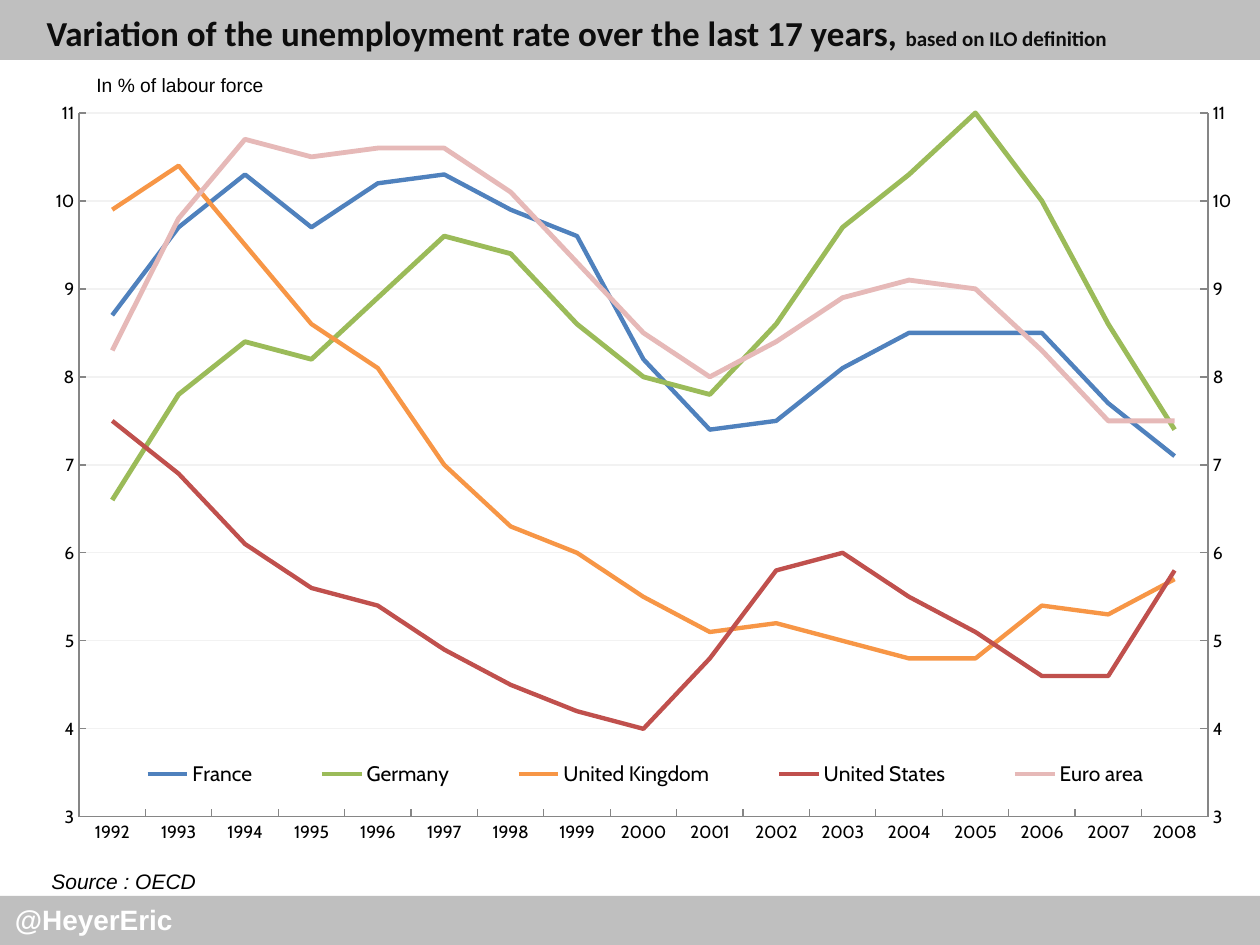
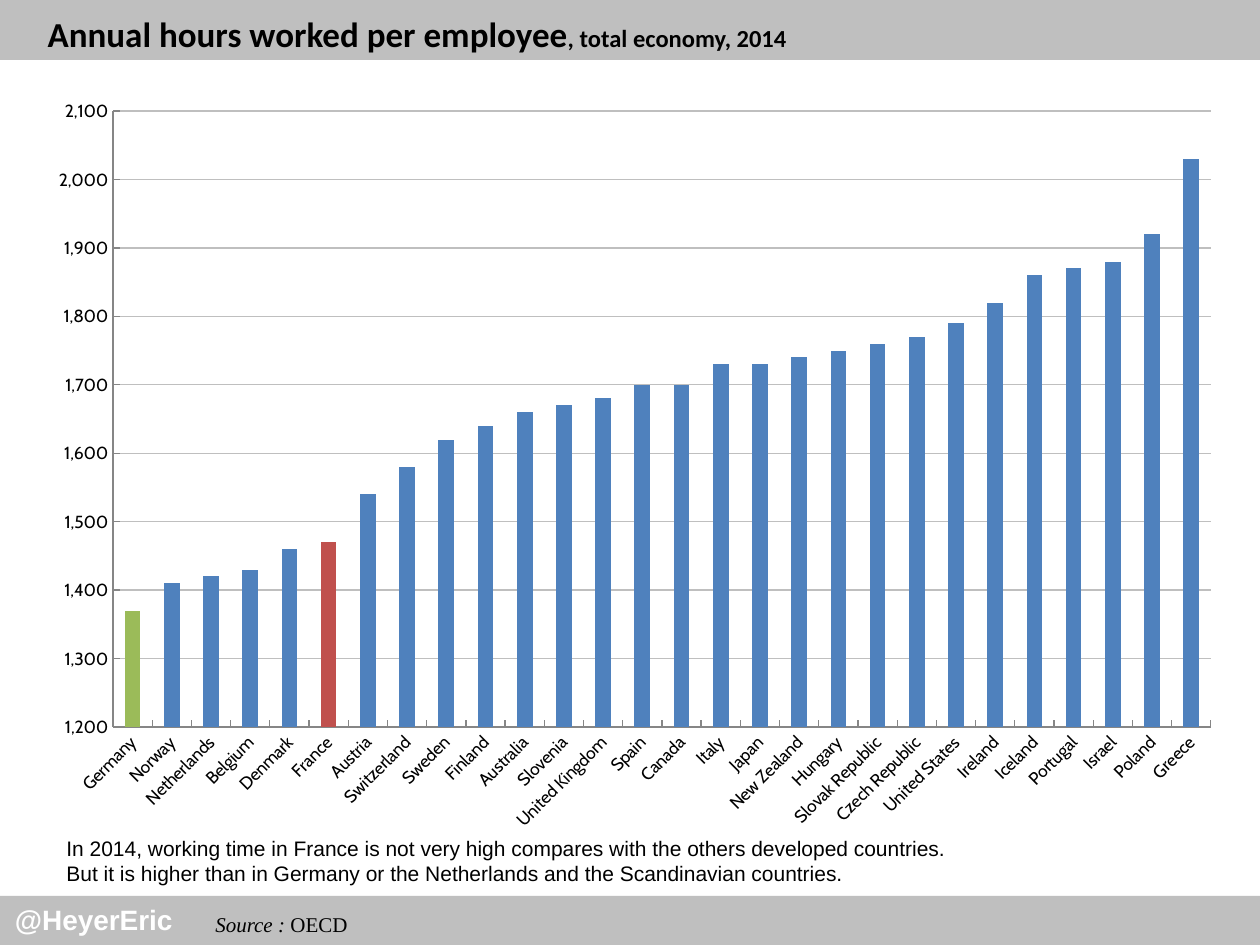
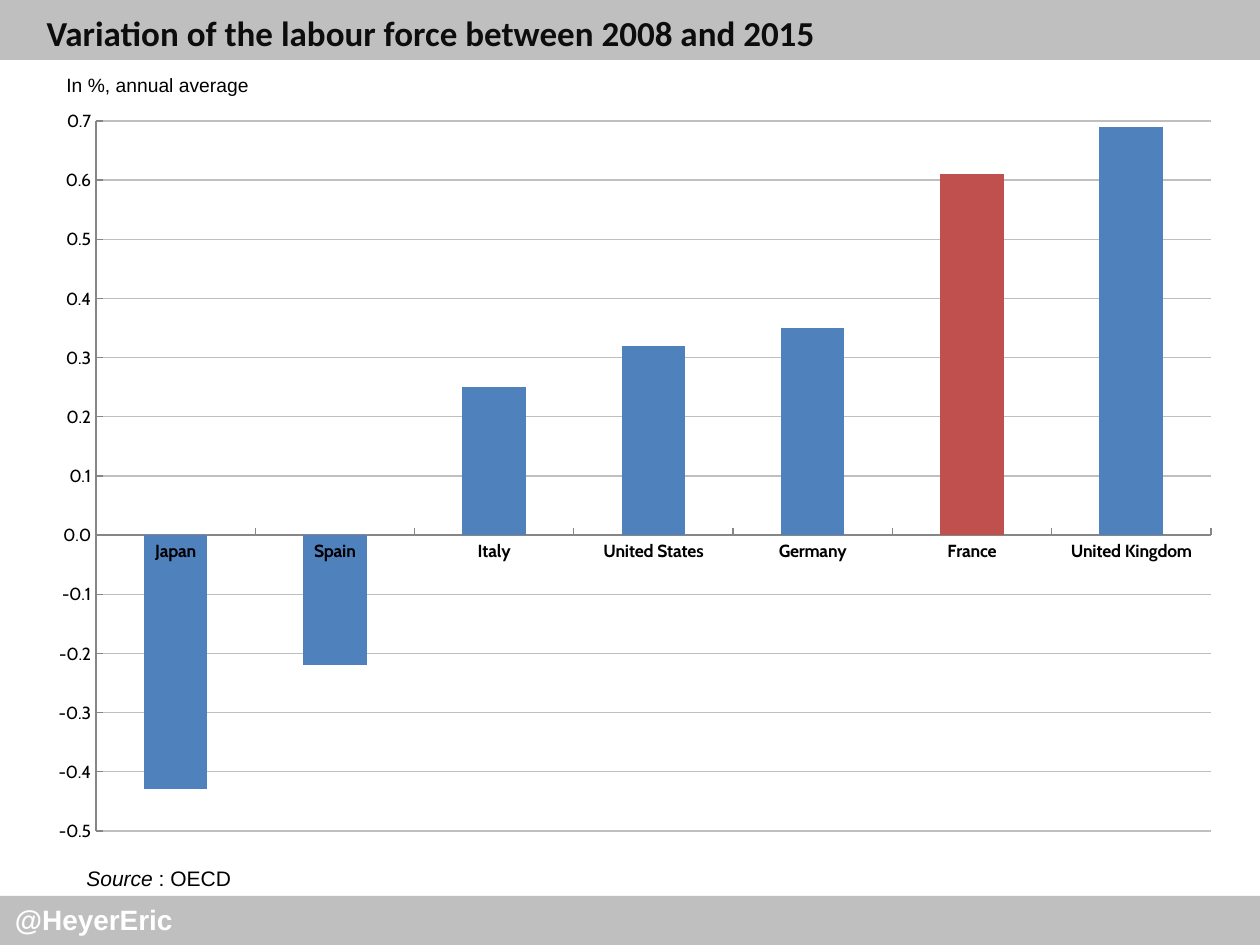
from copy import deepcopy

from lxml import etree
from pptx import Presentation
from pptx.chart.data import CategoryChartData
from pptx.dml.color import RGBColor
from pptx.enum.chart import XL_CHART_TYPE, XL_LEGEND_POSITION, XL_TICK_MARK
from pptx.enum.shapes import MSO_SHAPE
from pptx.enum.text import MSO_ANCHOR, MSO_AUTO_SIZE, PP_ALIGN
from pptx.oxml.ns import qn
from pptx.util import Pt

LINE, COLUMN = XL_CHART_TYPE.LINE, XL_CHART_TYPE.COLUMN_CLUSTERED
RIGHT_LEGEND = XL_LEGEND_POSITION.RIGHT
INSIDE, NO_TICK = XL_TICK_MARK.INSIDE, XL_TICK_MARK.NONE
RECT = MSO_SHAPE.RECTANGLE
MIDDLE, TOP = MSO_ANCHOR.MIDDLE, MSO_ANCHOR.TOP
FIXED = MSO_AUTO_SIZE.NONE
LEFT, RIGHT, JUSTIFY = PP_ALIGN.LEFT, PP_ALIGN.RIGHT, PP_ALIGN.JUSTIFY

SCALE = 914400 / 126
HEX = {
    "band": "BFBFBF", "white": "FFFFFF", "black": "000000", "ink": "0D0D0D",
    "axis": "868686", "pale": "F2F2F2", "blue": "4F81BD", "green": "9BBB59",
    "orange": "F79646", "red": "C0504D", "pink": "E6B9B8",
}
BANDS = [(0, 0, 1260, 60), (0, 896, 1260, 49)]
HANDLE = {"box": (0, 896, 185, 47), "wrap": False, "align": RIGHT, "size": 16,
          "color": "white", "bold": True, "lines": [[("@HeyerEric", False)]]}

SLIDES = [
    {
        "title": [("Variation of the unemployment rate over the last 17 years, ", 20),
                  ("based on ILO definition", 12)],
        "spot": (34, 0, 1201, 66), "ink": "ink",
        "texts": [
            {"box": (84, 67, 833, 37), "size": 11,
             "lines": [[("In % of labour force", False)]]},
            {"box": (39, 862, 625, 38), "lines": [[("Source : OECD", True)]]},
        ],
        "chart": {
            "kind": LINE, "box": (34, 96, 1201, 761), "plot": (79, 113, 1129, 704),
            "legend": (85, 755, 1121, 38), "axis": (3, 11, 1, "General"), "grid": "pale",
            "cats": [str(year) for year in range(1992, 2009)],
            "right": 3,
            "series": [
                ("France", "blue", 2.5, [8.7, 9.7, 10.3, 9.7, 10.2, 10.3, 9.9, 9.6, 8.2,
                                         7.4, 7.5, 8.1, 8.5, 8.5, 8.5, 7.7, 7.1]),
                ("Germany", "green", 2.75, [6.6, 7.8, 8.4, 8.2, 8.9, 9.6, 9.4, 8.6, 8,
                                            7.8, 8.6, 9.7, 10.3, 11, 10, 8.6, 7.4]),
                ("United Kingdom", "orange", 2.5, [9.9, 10.4, 9.5, 8.6, 8.1, 7, 6.3, 6, 5.5,
                                                   5.1, 5.2, 5, 4.8, 4.8, 5.4, 5.3, 5.7]),
                ("United States", "red", 2.5, [7.5, 6.9, 6.1, 5.6, 5.4, 4.9, 4.5, 4.2, 4,
                                               4.8, 5.8, 6, 5.5, 5.1, 4.6, 4.6, 5.8]),
                ("Euro area", "pink", 2.75, [8.3, 9.8, 10.7, 10.5, 10.6, 10.6, 10.1, 9.3, 8.5,
                                             8, 8.4, 8.9, 9.1, 9, 8.3, 7.5, 7.5]),
            ],
        },
    },
    {
        "title": [("Annual hours worked per employee", 20), (", total economy, 2014", 14)],
        "spot": (35, 1, 1201, 66), "ink": "black",
        "texts": [
            {"box": (203, 905, 159, 38), "wrap": False, "align": JUSTIFY, "anchor": MIDDLE,
             "font": "Times New Roman", "lines": [[("Source : ", True), ("OECD", False)]]},
            {"box": (54, 829, 1181, 63), "lines": [
                [("In 2014, working time in France is not very high compares with the "
                  "others developed countries.", False)],
                [("But it is higher than in Germany or the Netherlands and the "
                  "Scandinavian countries.", False)]]},
        ],
        "chart": {
            "kind": COLUMN, "box": (34, 86, 1201, 761), "plot": (113, 111, 1098, 616),
            "axis": (1200, 2100, 100, "#,##0"), "grid": "band", "turn": -45,
            "cats": ["Germany", "Norway", "Netherlands", "Belgium", "Denmark", "France",
                     "Austria", "Switzerland", "Sweden", "Finland", "Australia", "Slovenia",
                     "United Kingdom", "Spain", "Canada", "Italy", "Japan", "New Zealand",
                     "Hungary", "Slovak Republic", "Czech Republic", "United States",
                     "Ireland", "Iceland", "Portugal", "Israel", "Poland", "Greece"],
            "series": [("Series 1", "blue", 0, [
                1370, 1410, 1420, 1430, 1460, 1470, 1540, 1580, 1620, 1640,
                1660, 1670, 1680, 1700, 1700, 1730, 1730, 1740, 1750, 1760,
                1770, 1790, 1820, 1860, 1870, 1880, 1920, 2030])],
            "marks": {"Germany": "green", "France": "red"},
        },
    },
    {
        "title": [("Variation of the labour force between 2008 and 2015", 20)],
        "spot": (34, 0, 1201, 66), "ink": "ink",
        "texts": [
            {"box": (74, 859, 1101, 38), "lines": [[("Source", True), (" : OECD", False)]]},
            {"box": (54, 67, 833, 37), "size": 11,
             "lines": [[("In %, annual average", False)]]},
        ],
        "chart": {
            "kind": COLUMN, "box": (34, 96, 1201, 761), "plot": (96, 121, 1115, 710),
            "axis": (-0.5, 0.7, 0.1, "#,##0.0"), "grid": "band", "bold": True,
            "cats": ["Japan", "Spain", "Italy", "United States", "Germany", "France",
                     "United Kingdom"],
            "series": [("Series 1", "blue", 0, [-0.43, -0.22, 0.25, 0.32, 0.35, 0.61, 0.69])],
            "marks": {"France": "red"},
        },
    },
]


def emu(box):
    return [round(n * SCALE) for n in box]


def rgb(name):
    return RGBColor.from_string(HEX[name])


def style(font, face, size, color, bold=False, italic=False):
    font.name, font.size = face, Pt(size)
    font.bold, font.italic = bold, italic
    font.color.rgb = rgb(color)


def add_text(slide, item):
    shape = slide.shapes.add_textbox(*emu(item["box"]))
    frame = shape.text_frame
    frame.word_wrap = item.get("wrap", True)
    frame.vertical_anchor = item.get("anchor", TOP)
    for i, line in enumerate(item["lines"]):
        para = frame.add_paragraph() if i else frame.paragraphs[0]
        para.alignment = item.get("align", LEFT)
        for text, italic in line:
            run = para.add_run()
            run.text = text
            style(run.font, item.get("font", "Arial"), item.get("size", 12),
                  item.get("color", "black"), item.get("bold", False), italic)
    return shape


def add_band(slide, box):
    band = slide.shapes.add_shape(RECT, *emu(box))
    band.shadow.inherit = False
    band.fill.solid()
    band.fill.fore_color.rgb = rgb("band")
    band.line.fill.background()
    return band


def share(deck, slide):
    parts = [add_band(slide, box) for box in BANDS] + [add_text(slide, HANDLE)]
    for i, part in enumerate(parts):
        part.element.nvSpPr.cNvPr.set("id", str(50 + i))
        deck.slide_master.shapes.element.append(part.element)


def set_title(slide, item):
    title = slide.shapes.title
    title.left, title.top, title.width, title.height = emu(item["spot"])
    frame = title.text_frame
    frame.auto_size, frame.word_wrap = FIXED, True
    frame.vertical_anchor = MIDDLE
    para = frame.paragraphs[0]
    para.alignment = LEFT
    for text, size in item["title"]:
        run = para.add_run()
        run.text = text
        style(run.font, "Calibri", size, item["ink"], True)


def place(node, index, box, outer, inner=False):
    for old in node.findall(qn("c:layout")):
        node.remove(old)
    layout = etree.Element(qn("c:layout"))
    node.insert(index, layout)
    manual = etree.SubElement(layout, qn("c:manualLayout"))
    x, y, w, h = outer
    rows = [("layoutTarget", "inner")] if inner else []
    rows += [("xMode", "edge"), ("yMode", "edge"),
             ("x", (box[0] - x) / w), ("y", (box[1] - y) / h),
             ("w", box[2] / w), ("h", box[3] / h)]
    for tag, val in rows:
        text = val if isinstance(val, str) else f"{val:.4f}"
        etree.SubElement(manual, qn("c:" + tag)).set("val", text)


def split_axis(area, count):
    plot = area.find(qn("c:lineChart"))
    twin = deepcopy(plot)
    for group, drop in ((plot, slice(count, None)), (twin, slice(count))):
        for ser in group.findall(qn("c:ser"))[drop]:
            group.remove(ser)
    plot.addnext(twin)
    for node, val in zip(twin.findall(qn("c:axId")), ("101", "102")):
        node.set("val", val)
    cat, val = (deepcopy(area.find(qn(tag))) for tag in ("c:catAx", "c:valAx"))
    for axis, own, other in ((cat, "101", "102"), (val, "102", "101")):
        axis.find(qn("c:axId")).set("val", own)
        axis.find(qn("c:crossAx")).set("val", other)
    cat.find(qn("c:delete")).set("val", "1")
    val.find(qn("c:axPos")).set("val", "r")
    val.find(qn("c:crosses")).set("val", "max")
    val.remove(val.find(qn("c:majorGridlines")))
    last = area.find(qn("c:valAx"))
    last.addnext(val)
    val.addnext(cat)


def set_axes(chart, item):
    cat, val = chart.category_axis, chart.value_axis
    for axis in (cat, val):
        axis.major_tick_mark, axis.minor_tick_mark = INSIDE, NO_TICK
        axis.format.line.color.rgb = rgb("axis")
        axis.format.line.width = Pt(0.75)
        style(axis.tick_labels.font, "Cabin", 10, "black")
    cat.has_major_gridlines = False
    cat.tick_labels.font.bold = item.get("bold", False)
    if "turn" in item:
        body = cat.tick_labels.font._element.getparent().getparent().getparent().find(qn("a:bodyPr"))
        body.set("rot", str(item["turn"] * 60000))
        body.set("vert", "horz")
    val.minimum_scale, val.maximum_scale, val.major_unit, form = item["axis"]
    val.tick_labels.number_format = form
    val.tick_labels.number_format_is_linked = False
    val.has_major_gridlines = True
    grid = val.major_gridlines.format.line
    grid.color.rgb, grid.width = rgb(item["grid"]), Pt(0.75)


def add_chart(slide, item):
    data = CategoryChartData()
    data.categories = item["cats"]
    for name, _, _, vals in item["series"]:
        data.add_series(name, vals)
    chart = slide.shapes.add_chart(item["kind"], *emu(item["box"]), data).chart
    chart.has_title = False
    chart.has_legend = "legend" in item
    style(chart.font, "Cabin", 10, "black")
    set_axes(chart, item)
    plot = chart.plots[0]
    plot.vary_by_categories = False
    for ser, (_, color, width, _) in zip(plot.series, item["series"]):
        if item["kind"] == LINE:
            ser.smooth = False
            ser.format.line.color.rgb = rgb(color)
            ser.format.line.width = Pt(width)
            continue
        plot.gap_width = 150
        ser.invert_if_negative = False
        ser.format.fill.solid()
        ser.format.fill.fore_color.rgb = rgb(color)
        for name, mark in item["marks"].items():
            fill = ser.points[item["cats"].index(name)].format.fill
            fill.solid()
            fill.fore_color.rgb = rgb(mark)
    area = chart.element.find(".//" + qn("c:plotArea"))
    place(area, 0, item["plot"], item["box"], True)
    if "legend" in item:
        legend = chart.legend
        legend.position, legend.include_in_layout = RIGHT_LEGEND, False
        style(legend.font, "Cabin", 12, "black")
        place(chart.element.find(".//" + qn("c:legend")), 1, item["legend"], item["box"])
    if "right" in item:
        split_axis(area, item["right"])


def main():
    deck = Presentation()
    deck.slide_width, deck.slide_height = emu((1260, 945))
    for i, item in enumerate(SLIDES):
        slide = deck.slides.add_slide(deck.slide_layouts[5])
        if i == 0:
            share(deck, slide)
        set_title(slide, item)
        add_chart(slide, item["chart"])
        for text in item["texts"]:
            add_text(slide, text)
    deck.save("out.pptx")


if __name__ == "__main__":
    main()
